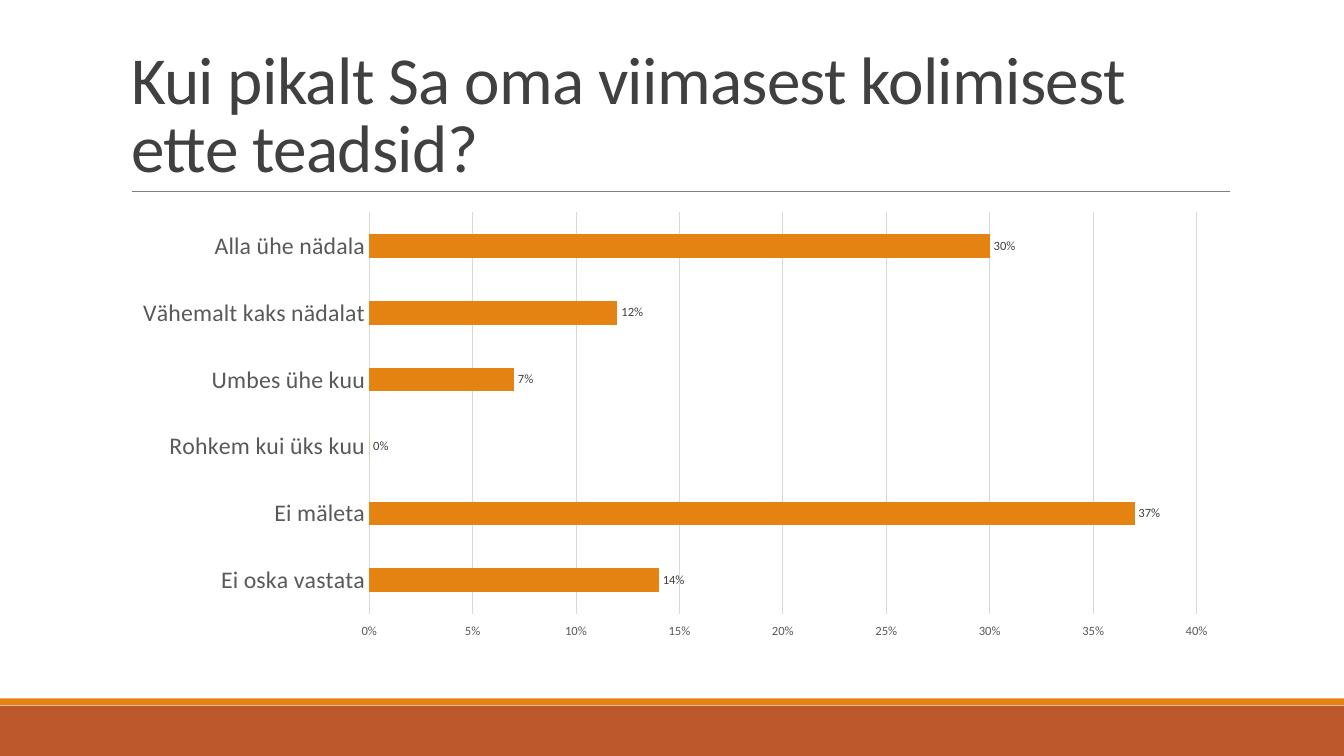
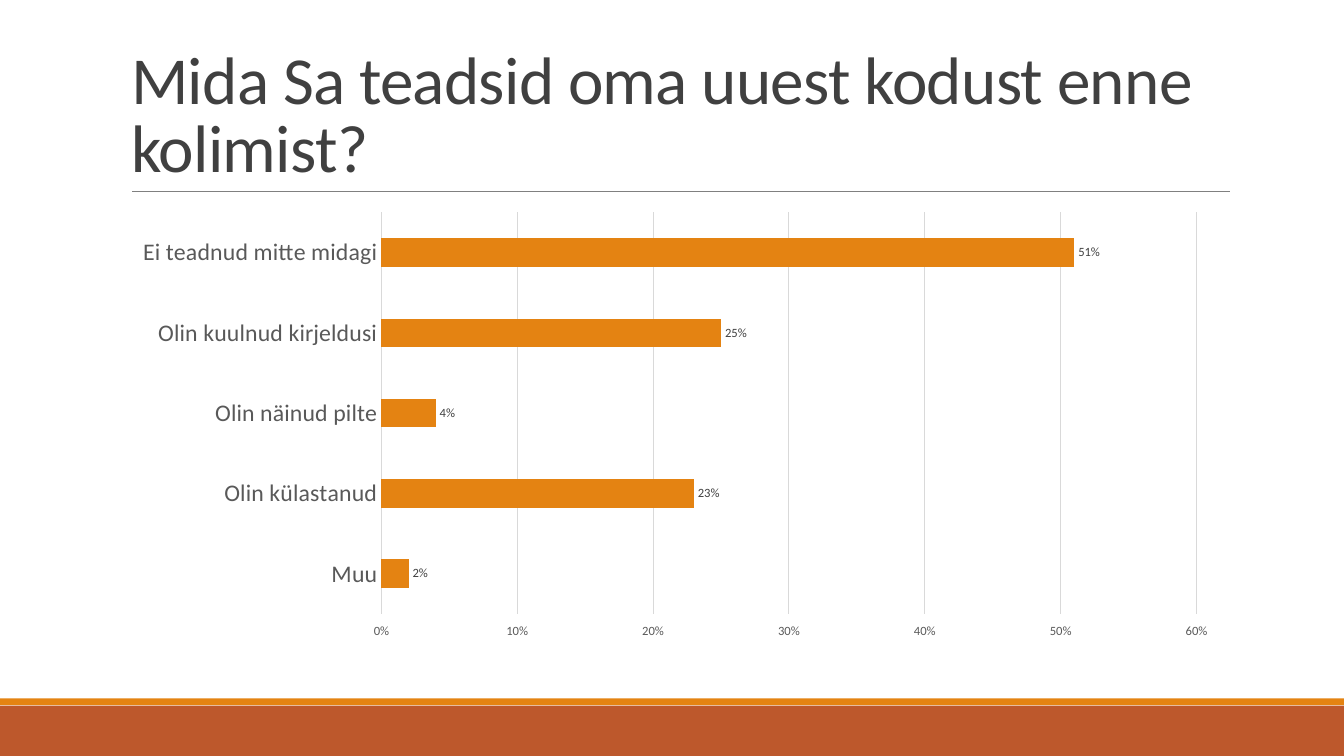
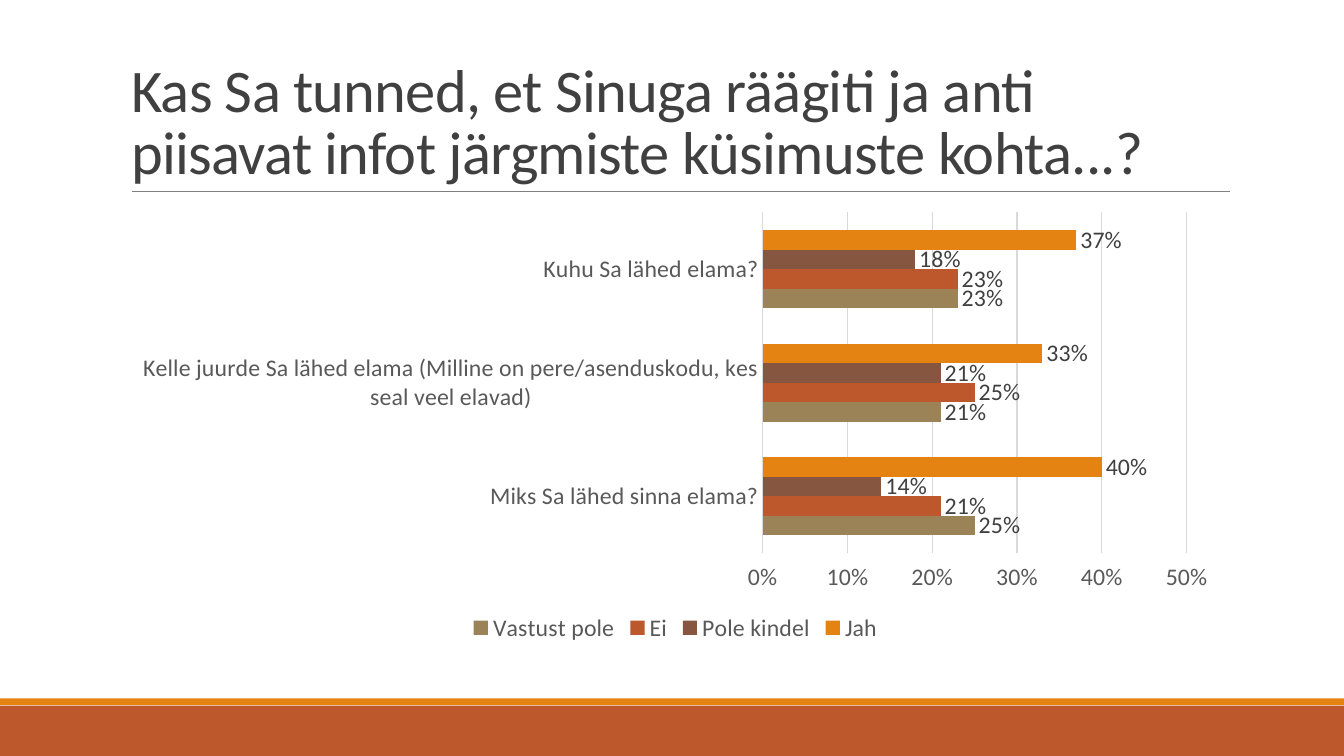
from pptx import Presentation
from pptx.chart.data import CategoryChartData
from pptx.dml.color import RGBColor
from pptx.enum.chart import (XL_CHART_TYPE, XL_LABEL_POSITION, XL_LEGEND_POSITION,
                             XL_TICK_LABEL_POSITION, XL_TICK_MARK)
from pptx.enum.shapes import MSO_CONNECTOR, MSO_SHAPE
from pptx.enum.text import MSO_ANCHOR, MSO_AUTO_SIZE, PP_ALIGN
from pptx.oxml.ns import qn
from pptx.util import Cm, Pt

BAR_CLUSTERED = XL_CHART_TYPE.BAR_CLUSTERED
LABELS_HIGH = XL_TICK_LABEL_POSITION.HIGH
NO_TICKS = XL_TICK_MARK.NONE
OUTSIDE_END = XL_LABEL_POSITION.OUTSIDE_END
LEGEND_BOTTOM = XL_LEGEND_POSITION.BOTTOM
STRAIGHT = MSO_CONNECTOR.STRAIGHT
RECTANGLE = MSO_SHAPE.RECTANGLE
ANCHOR_BOTTOM = MSO_ANCHOR.BOTTOM
NO_AUTOFIT = MSO_AUTO_SIZE.NONE
ALIGN_LEFT = PP_ALIGN.LEFT

# Shared style
FONT = "Calibri"
ORANGE, RUST, BROWN, SAND = "E48312", "BD582C", "865640", "9B8357"
DARK, GREY, RULE, GRID = "404040", "595959", "808080", "D9D9D9"
SLIDE_WIDTH, SLIDE_HEIGHT = Cm(33.87), Cm(19.05)
CONTENT_LEFT, CONTENT_WIDTH = Cm(3.05), Cm(27.94)
TITLE_ONLY = 5
TITLE_SIZE, CATEGORY_SIZE, VALUE_SIZE = 48, 17, 9
PERCENT = "0%"

# Survey questions: each series is (name, colour, values)
QUESTIONS = [
    {
        "title": "Kui pikalt Sa oma viimasest kolimisest ette teadsid?",
        "categories": ["Alla ühe nädala", "Vähemalt kaks nädalat", "Umbes ühe kuu",
                       "Rohkem kui üks kuu", "Ei mäleta", "Ei oska vastata"],
        "series": [("Series 1", ORANGE, [0.3, 0.12, 0.07, 0, 0.37, 0.14])],
        "maximum": 0.4, "step": 0.05,
    },
    {
        "title": "Mida Sa teadsid oma uuest kodust enne kolimist?",
        "categories": ["Ei teadnud mitte midagi", "Olin kuulnud kirjeldusi",
                       "Olin näinud pilte", "Olin külastanud", "Muu"],
        "series": [("Series 1", ORANGE, [0.51, 0.25, 0.04, 0.23, 0.02])],
        "maximum": 0.6, "step": 0.1,
    },
    {
        "title": "Kas Sa tunned, et Sinuga räägiti ja anti piisavat infot "
                 "järgmiste küsimuste kohta...?",
        "title_size": 43.2,
        "categories": ["Kuhu Sa lähed elama?",
                       "Kelle juurde Sa lähed elama (Milline on pere/asenduskodu, "
                       "kes seal veel elavad)",
                       "Miks Sa lähed sinna elama?"],
        "series": [("Jah", ORANGE, [0.37, 0.33, 0.4]),
                   ("Pole kindel", BROWN, [0.18, 0.21, 0.14]),
                   ("Ei", RUST, [0.23, 0.25, 0.21]),
                   ("Vastust pole", SAND, [0.23, 0.21, 0.25])],
        "maximum": 0.5, "step": 0.1, "value_size": 17,
    },
]


def color(hex_string):
    return RGBColor.from_string(hex_string)


def set_font(font, size, hex_string):
    font.name = FONT
    font.size = Pt(size)
    font.color.rgb = color(hex_string)


def set_line(line, hex_string, width):
    line.color.rgb = color(hex_string)
    line.width = Pt(width)


def add_band(slide, top, height, hex_string):
    band = slide.shapes.add_shape(RECTANGLE, 0, top, SLIDE_WIDTH, height)
    band.shadow.inherit = False
    band.fill.solid()
    band.fill.fore_color.rgb = color(hex_string)
    band.line.fill.background()


def add_title_rule(slide):
    top = Cm(4.83)
    rule = slide.shapes.add_connector(STRAIGHT, Cm(3.33), top, Cm(31), top)
    set_line(rule.line, RULE, 0.5)
    properties = rule.element.spPr
    properties.append(properties.makeelement(qn("a:effectLst"), {}))


def set_title(slide, text, size):
    title = slide.shapes.title
    title.left, title.top = CONTENT_LEFT, Cm(0.79)
    title.width, title.height = CONTENT_WIDTH, Cm(4.04)
    frame = title.text_frame
    frame.text = text
    frame.word_wrap = True
    frame.auto_size = NO_AUTOFIT
    frame.vertical_anchor = ANCHOR_BOTTOM
    paragraph = frame.paragraphs[0]
    paragraph.alignment = ALIGN_LEFT
    paragraph.line_spacing = 0.85
    set_font(paragraph.font, size, DARK)
    # Letter spacing in hundredths of a point
    paragraph.runs[0].font._element.set("spc", "-50")


def add_question_slide(presentation, title, title_size):
    slide = presentation.slides.add_slide(presentation.slide_layouts[TITLE_ONLY])
    add_band(slide, Cm(17.78), Cm(1.27), RUST)
    add_band(slide, Cm(17.6), Cm(0.17), ORANGE)
    add_title_rule(slide)
    set_title(slide, title, title_size)
    return slide


def format_axes(chart, maximum, step, value_size):
    categories, values = chart.category_axis, chart.value_axis
    for axis, size in ((categories, CATEGORY_SIZE), (values, value_size)):
        axis.major_tick_mark = axis.minor_tick_mark = NO_TICKS
        set_font(axis.tick_labels.font, size, GREY)

    # First category on top, value labels still at the bottom
    categories.reverse_order = True
    values.tick_label_position = LABELS_HIGH
    categories.has_major_gridlines = False
    set_line(categories.format.line, GRID, 0.75)

    values.minimum_scale, values.maximum_scale = 0, maximum
    values.major_unit = step
    values.tick_labels.number_format = PERCENT
    values.tick_labels.number_format_is_linked = False
    values.format.line.fill.background()
    values.has_major_gridlines = True
    set_line(values.major_gridlines.format.line, GRID, 0.75)


def format_series(series, hex_string, label_size):
    series.format.fill.solid()
    series.format.fill.fore_color.rgb = color(hex_string)
    series.invert_if_negative = False
    labels = series.data_labels
    labels.show_value = True
    labels.position = OUTSIDE_END
    labels.number_format = PERCENT
    labels.number_format_is_linked = False
    set_font(labels.font, label_size, DARK)


def add_answer_chart(slide, categories, series, maximum, step, value_size):
    data = CategoryChartData(number_format=PERCENT)
    data.categories = categories
    for name, _, values in series:
        data.add_series(name, values)
    chart = slide.shapes.add_chart(BAR_CLUSTERED, CONTENT_LEFT, Cm(5.13),
                                   CONTENT_WIDTH, Cm(11.18), data).chart
    set_font(chart.font, value_size, GREY)
    chart.has_title = False
    format_axes(chart, maximum, step, value_size)

    plot = chart.plots[0]
    plot.gap_width = 182
    plot.vary_by_categories = False
    for plotted, (_, hex_string, _) in zip(plot.series, series):
        format_series(plotted, hex_string, value_size)

    chart.has_legend = len(series) > 1
    if chart.has_legend:
        chart.legend.position = LEGEND_BOTTOM
        chart.legend.include_in_layout = False
        set_font(chart.legend.font, value_size, GREY)


def main():
    presentation = Presentation()
    presentation.slide_width = SLIDE_WIDTH
    presentation.slide_height = SLIDE_HEIGHT
    for question in QUESTIONS:
        slide = add_question_slide(presentation, question["title"],
                                   question.get("title_size", TITLE_SIZE))
        add_answer_chart(slide, question["categories"], question["series"],
                         question["maximum"], question["step"],
                         question.get("value_size", VALUE_SIZE))
    presentation.save("out.pptx")


main()
